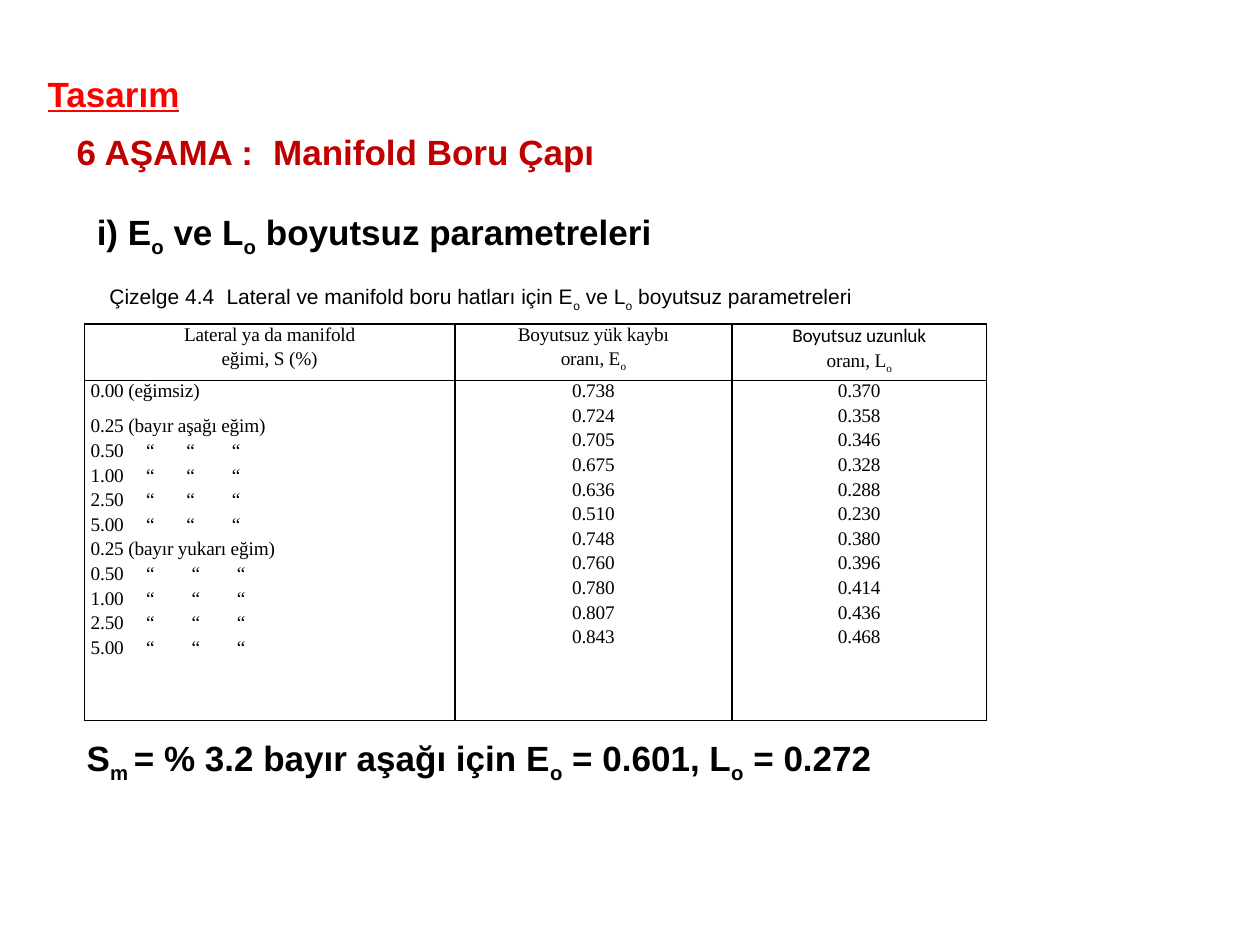
from lxml.etree import SubElement as Sub
from pptx import Presentation
from pptx.dml.color import RGBColor as Rgb
from pptx.enum.text import MSO_ANCHOR as Anchor, MSO_AUTO_SIZE as Auto, PP_ALIGN as Align
from pptx.oxml import parse_xml
from pptx.oxml.ns import nsdecls, qn
from pptx.util import Inches, Pt

HUES = {"ink": "000000", "red": "FF0000", "dark": "C00000"}
COLS, ROWS = 100, 75
SERIF = dict(font="Times New Roman", size=11, track=-10, after=1.8)
DROP = -25


def write(para, text, font="Arial", size=20, hue="ink", bold=False, line=False,
          align=Align.LEFT, before=0, after=0, tabs=(), track=0, drop=DROP):
    para.alignment = align
    para.space_before, para.space_after = Pt(before), Pt(after)
    if tabs:
        stops = Sub(para._p.get_or_add_pPr(), qn("a:tabLst"))
        for stop in tabs:
            Sub(stops, qn("a:tab"), pos=str(Inches(stop)), algn="l")
    for spot, part in enumerate(text.split("~")):
        run = para.add_run()
        run.text = part
        face = run.font
        face.name, face.size, face.bold, face.underline = font, Pt(size), bold, line
        face.color.rgb = Rgb.from_string(HUES[hue])
        props = run._r.get_or_add_rPr()
        if track:
            props.set("spc", str(track))
        if spot % 2:
            props.set("baseline", str(drop * 1000))


class Page:
    def __init__(self, deck):
        self.slide = deck.slides.add_slide(deck.slide_layouts[6])
        self.wide = deck.slide_width / COLS
        self.high = deck.slide_height / ROWS

    def place(self, col, row, cols, rows):
        return [round(n) for n in (col * self.wide, row * self.high,
                                   cols * self.wide, rows * self.high)]

    def text(self, spot, text, wrap=True, anchor=Anchor.TOP, pads=(0.05, 0.05), **style):
        frame = self.slide.shapes.add_textbox(*self.place(*spot)).text_frame
        frame.word_wrap, frame.vertical_anchor = wrap, anchor
        frame.auto_size = Auto.SHAPE_TO_FIT_TEXT
        frame.margin_top, frame.margin_bottom = map(Inches, pads)
        write(frame.paragraphs[0], text, **style)

    def table(self, spot, cols, rows, cells):
        grid = self.slide.shapes.add_table(len(rows), len(cols), *self.place(*spot)).table
        grid.first_row = grid.horz_banding = False
        for col, size in zip(grid.columns, cols):
            col.width = round(size * self.wide)
        for row, size in zip(grid.rows, rows):
            row.height = round(size * self.high)
        for cell, lines in zip(grid.iter_cells(), cells):
            self.cell(cell, lines)

    def cell(self, cell, lines):
        cell.margin_left = cell.margin_right = Inches(0.05)
        cell.margin_top = cell.margin_bottom = 0
        cell.fill.background()
        frame = cell.text_frame
        for spot, (text, style) in enumerate(lines):
            para = frame.add_paragraph() if spot else frame.paragraphs[0]
            write(para, text, **{**SERIF, **style})
        props = cell._tc.get_or_add_tcPr()
        for spot, side in enumerate("LRTB"):
            props.insert(spot, parse_xml(
                f'<a:ln{side} {nsdecls("a")} w="{Pt(1)}"><a:solidFill>'
                f'<a:srgbClr val="{HUES["ink"]}"/></a:solidFill></a:ln{side}>'))


def mid(*lines):
    return [(line, dict(align=Align.CENTER)) for line in lines]


def slopes():
    side = dict(align=Align.JUSTIFY)
    lines = [("0.00 (eğimsiz)", side)]
    for way, stops, gap in (("aşağı", (0.44, 0.76, 1.12), 6),
                            ("yukarı", (0.44, 0.8, 1.16), 0)):
        lines.append((f"0.25 (bayır {way} eğim)", dict(side, before=gap)))
        lines += [(f"{rate}\t“\t“\t“", dict(side, tabs=stops))
                  for rate in ("0.50", "1.00", "2.50", "5.00")]
    return lines


def main():
    deck = Presentation()
    deck.slide_width, deck.slide_height = Inches(10), Inches(7.5)
    page = Page(deck)
    page.text((6.7, 16.2, 89, 4.4), "i) E~o~ ve L~o~ boyutsuz parametreleri", bold=True)
    page.text((5.1, 9.9, 89, 4.4), "6 AŞAMA :\tManifold Boru Çapı",
              hue="dark", bold=True, tabs=[1.56])
    loss = "0.738 0.724 0.705 0.675 0.636 0.510 0.748 0.760 0.780 0.807 0.843"
    span = "0.370 0.358 0.346 0.328 0.288 0.230 0.380 0.396 0.414 0.436 0.468"
    last = mid("Boyutsuz uzunluk", "oranı, L~o")
    last[0][1]["font"] = "Calibri"
    page.table((6.7, 25.7, 71.6, 31.5), (29.4, 22, 20.2), (4.5, 27), [
        mid("Lateral ya da manifold", "eğimi, S (%)"),
        mid("Boyutsuz yük kaybı", "oranı, E~o"),
        last,
        slopes(), mid(*loss.split()), mid(*span.split())])
    page.text((7.7, 21.8, 61.5, 3.1),
              "Çizelge 4.4\tLateral ve manifold boru hatları için E~o~ ve L~o~ boyutsuz parametreleri",
              wrap=False, anchor=Anchor.MIDDLE, pads=(0.08, 0.02), size=12,
              tabs=[0.93], drop=-30)
    page.text((5.9, 58, 75.6, 4.4), "S~m ~= % 3.2 bayır aşağı için E~o~ = 0.601, L~o~ = 0.272",
              bold=True, align=Align.JUSTIFY)
    page.text((2.8, 5.2, 97.2, 4.4), "Tasarım", anchor=Anchor.MIDDLE,
              hue="red", bold=True, line=True, align=Align.JUSTIFY)
    deck.save("out.pptx")


if __name__ == "__main__":
    main()
